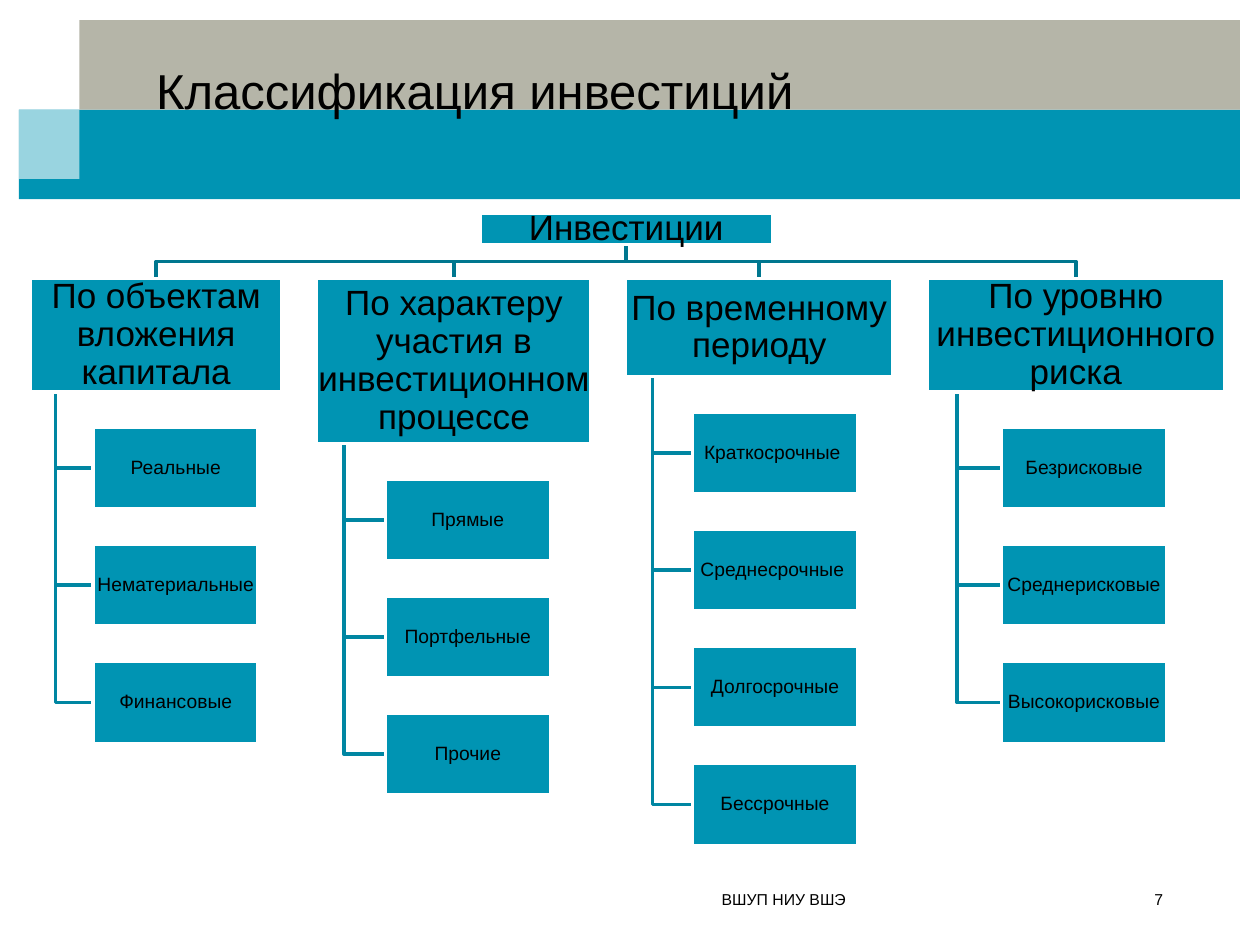
from lxml import etree
from pptx import Presentation, util as u
from pptx.dml.color import RGBColor
from pptx.enum import shapes, text
from pptx.oxml.ns import qn

TEAL = RGBColor(0x00, 0x94, 0xB3)
TRUNK = RGBColor(0x00, 0x77, 0x8F)
BRANCH = RGBColor(0x00, 0x86, 0xA2)
STONE = RGBColor(0xB5, 0xB5, 0xA8)
WHITE = RGBColor(0xFF, 0xFF, 0xFF)
BLACK = RGBColor(0x00, 0x00, 0x00)

COLUMNS, ROWS = 100, 75
CELL = u.Inches(0.1)

# Lengths below are in grid cells.
MARGIN, HEAD_GAP = 2.4, 2.73
ROOT = (38.1, 16.9, 23.2, 2.5)
HEAD_TOP = 22.1
LEAF_WIDTH, LEAF_HEIGHT, LEAF_GAP = 13.1, 6.5, 2.8
STEM_SHARE, LEAF_SHARE = 0.1, 0.25

GROUPS = [  # heading, width, height, kinds
    ("По объектам вложения капитала", 20, 9,
     ["Реальные", "Нематериальные", "Финансовые"]),
    ("По характеру участия в инвестиционном процессе", 21.8, 13.1,
     ["Прямые", "Портфельные", "Прочие"]),
    ("По временному периоду", 21.2, 7.8,
     ["Краткосрочные ", "Среднесрочные ", "Долгосрочные", "Бессрочные"]),
    ("По уровню инвестиционного риска", 23.6, 9,
     ["Безрисковые", "Среднерисковые", "Высокорисковые"]),
]


def cells(count):
    return u.Emu(round(count * CELL))


def write(shape, words, size, align=text.PP_ALIGN.LEFT,
          anchor=text.MSO_ANCHOR.MIDDLE, inset=None, spacing=None):
    frame = shape.text_frame
    frame.word_wrap = True
    frame.vertical_anchor = anchor
    if inset is not None:
        frame.margin_left = frame.margin_right = u.Inches(inset)
        frame.margin_top = frame.margin_bottom = u.Inches(inset)
    para = frame.paragraphs[0]
    para.alignment = align
    if spacing:
        para.line_spacing = spacing
    span = para.add_run()
    span.text = words
    span.font.size = u.Pt(size)
    span.font.name = "Arial"
    span.font.color.rgb = BLACK


class Painter:
    """Holds the current slide and draws on its grid."""

    def __init__(self, page):
        self.shapes = page.shapes

    def paint(self, shape, fill=None, line=None, alpha=None):
        shape.shadow.inherit = False
        if fill is None:
            shape.fill.background()
        else:
            shape.fill.solid()
            shape.fill.fore_color.rgb = fill
        if alpha is not None:
            color = shape.fill._xPr.find(qn("a:solidFill"))[0]
            etree.SubElement(color, qn("a:alpha")).set("val", str(alpha * 1000))
        if line is None:
            shape.line.fill.background()
        else:
            shape.line.color.rgb = line
            shape.line.width = u.Pt(2)

    def rectangle(self, area, **style):
        box = self.shapes.add_shape(shapes.MSO_SHAPE.RECTANGLE, *map(cells, area))
        self.paint(box, **style)
        return box

    def node(self, area, words, size):
        write(self.rectangle(area, fill=TEAL, line=WHITE), words, size,
              align=text.PP_ALIGN.CENTER, inset=0.01, spacing=0.9)

    def label(self, area, words, size, **style):
        write(self.shapes.add_textbox(*map(cells, area)), words, size, **style)

    def elbow(self, points, color):
        """Draws an open line through the points."""
        start, *rest = [(cells(x), cells(y)) for x, y in points]
        builder = self.shapes.build_freeform(*start)
        builder.add_line_segments(rest, close=False)
        self.paint(builder.convert_to_shape(), line=color)


def draw_banner(painter):
    left, body, right = 1.5, 6.3, 98.4
    top, middle, height = 1.6, 8.7, 7.1
    painter.rectangle((left, middle, right - left, height), fill=TEAL)
    painter.rectangle((body, top, right - body, height), fill=STONE)
    painter.rectangle((left, middle, body - left, 5.5), fill=WHITE, alpha=60)
    painter.label((11.4, 4.3, 81.9, 10.5), "Классификация инвестиций", 28,
                  anchor=text.MSO_ANCHOR.TOP)


def draw_tree(painter):
    root_x, root_bottom = ROOT[0] + ROOT[2] / 2, ROOT[1] + ROOT[3]
    bus = (root_bottom + HEAD_TOP) / 2
    nodes = [(ROOT, "Инвестиции", 20)]
    left = MARGIN
    for heading, width, height, kinds in GROUPS:
        nodes.append(((left, HEAD_TOP, width, height), heading, 20))
        center, bottom = left + width / 2, HEAD_TOP + height
        stem, leaf_left = left + STEM_SHARE * width, left + LEAF_SHARE * width
        painter.elbow([(root_x, root_bottom), (root_x, bus), (center, bus),
                       (center, HEAD_TOP)], TRUNK)
        for index, kind in enumerate(kinds):
            top = bottom + LEAF_GAP + index * (LEAF_HEIGHT + LEAF_GAP)
            middle = top + LEAF_HEIGHT / 2
            painter.elbow([(stem, bottom), (stem, middle), (leaf_left, middle)],
                          BRANCH)
            nodes.append(((leaf_left, top, LEAF_WIDTH, LEAF_HEIGHT), kind, 11))
        left += width + HEAD_GAP
    for node in nodes:
        painter.node(*node)


def main():
    deck = Presentation()
    deck.slide_width, deck.slide_height = cells(COLUMNS), cells(ROWS)
    painter = Painter(deck.slides.add_slide(deck.slide_layouts[6]))
    draw_banner(painter)
    draw_tree(painter)
    for left, width, words in [(88.6, 4.7, "7"), (11.4, 56.7, "ВШУП НИУ ВШЭ")]:
        painter.label((left, 70.6, width, 1.5), words, 9, align=text.PP_ALIGN.RIGHT)
    deck.save("out.pptx")


if __name__ == "__main__":
    main()
